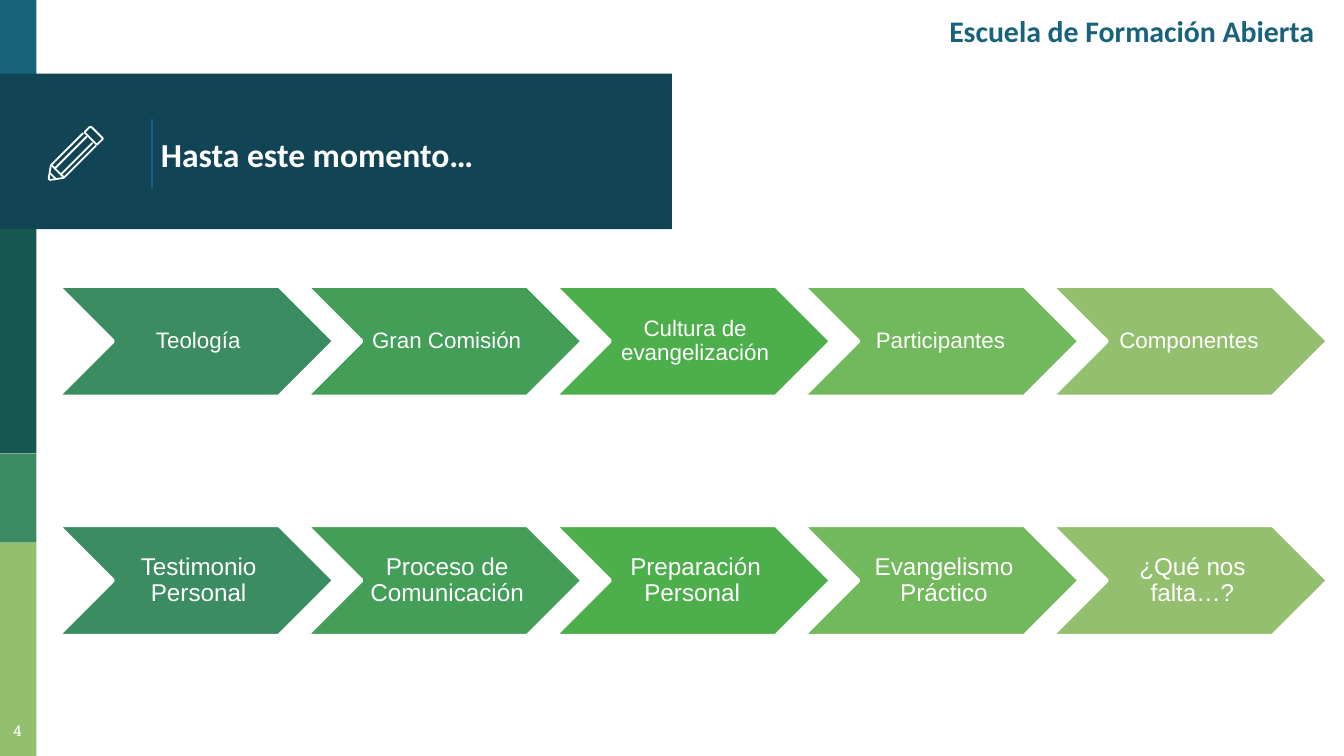
from lxml import etree
from pptx import Presentation
from pptx.dml.color import RGBColor
from pptx.enum.shapes import MSO_CONNECTOR, MSO_SHAPE
from pptx.enum.text import MSO_ANCHOR, MSO_AUTO_SIZE, PP_ALIGN
from pptx.oxml.ns import qn
from pptx.util import Pt

RECTANGLE, CHEVRON = MSO_SHAPE.RECTANGLE, MSO_SHAPE.CHEVRON
STRAIGHT = MSO_CONNECTOR.STRAIGHT
TOP, MIDDLE = MSO_ANCHOR.TOP, MSO_ANCHOR.MIDDLE
LEFT, CENTER, RIGHT = PP_ALIGN.LEFT, PP_ALIGN.CENTER, PP_ALIGN.RIGHT
NO_FIT = MSO_AUTO_SIZE.NONE

WHITE = RGBColor(0xFF, 0xFF, 0xFF)
BLUE = RGBColor(0x18, 0x63, 0x7B)
NAVY = RGBColor(0x11, 0x44, 0x54)
TEAL = RGBColor(0x16, 0x57, 0x51)
GREEN = RGBColor(0x3B, 0x8D, 0x61)
LIME = RGBColor(0x94, 0xBF, 0x6E)
STEP_COLORS = [GREEN, RGBColor(0x43, 0x9E, 0x58), RGBColor(0x4C, 0xAF, 0x4B),
               RGBColor(0x72, 0xB8, 0x5C), LIME]

# Coloured blocks: left, top, width, height, colour
BLOCKS = [
    (0, 0, 19.5, 42, BLUE),
    (0, 39.5, 360, 83.25, NAVY),
    (0, 122.75, 19.5, 120.25, TEAL),
    (0, 243, 19.5, 47.75, GREEN),
    (0, 290.75, 19.5, 114.25, LIME),
]

# Pencil strokes: points, closed or open
PENCIL = [
    ([(54.9, 73.9), (49.3, 68.3), (48.6, 67.9), (47.9, 68.2), (45.3, 70.9),
      (51.9, 77.5), (54.7, 74.9), (55.1, 74.4)], True),           # eraser
    ([(49.6, 76.5), (32.6, 93.5)], False),                       # lower ridge
    ([(44.6, 71.3), (27.5, 88.4), (27.2, 89), (26.1, 95.7), (26.4, 96.2),
      (27, 96.4), (33.7, 95.4), (34.4, 95.1), (51.5, 78)], False),  # body
    ([(29.5, 90.1), (46.6, 73)], False),                         # upper ridge
    ([(29.9, 95.9), (26.7, 92.7)], False),                       # lead
    ([(27.5, 88.4), (34.4, 95.2)], False),                       # cut edge
]

# Process rows: top, text size, left inset, steps
ROWS = [
    (153.2, 12, 3.8, ["Teología", "Gran Comisión", "Cultura de evangelización",
                      "Participantes ", "Componentes "]),
    (281.4, 13, 4.1, ["Testimonio Personal", "Proceso de Comunicación",
                      "Preparación Personal ", "Evangelismo Práctico",
                      "¿Qué nos falta…?"]),
]
ROW_LEFT, STEP_PITCH, STEP_WIDTH, STEP_HEIGHT = 31, 133.1, 148, 59.2


def add_block(page, kind, left, top, width, height, color, border=None):
    block = page.shapes.add_shape(kind, Pt(left), Pt(top), Pt(width), Pt(height))
    block.shadow.inherit = False
    block.fill.solid()
    block.fill.fore_color.rgb = color
    if border:
        block.line.color.rgb = border
        block.line.width = Pt(2)
    else:
        block.line.fill.background()


def write_text(box, text, size, font="Arial", color=WHITE, bold=False,
               align=CENTER, anchor=MIDDLE, insets=(7.2, 7.2, 7.2, 7.2),
               spacing=None):
    frame = box.text_frame
    frame.word_wrap = True
    frame.auto_size = NO_FIT
    frame.vertical_anchor = anchor
    (frame.margin_left, frame.margin_top,
     frame.margin_right, frame.margin_bottom) = map(Pt, insets)
    para = frame.paragraphs[0]
    para.alignment = align
    if spacing:
        para.line_spacing = spacing
    span = para.add_run()
    span.text = text
    span.font.name = font
    span.font.size = Pt(size)
    span.font.bold = bold
    span.font.color.rgb = color


def add_text(page, left, top, width, height, text, size, **style):
    box = page.shapes.add_textbox(Pt(left), Pt(top), Pt(width), Pt(height))
    write_text(box, text, size, **style)


def add_title(page, text):
    title = page.shapes.title
    title.left, title.top, title.width, title.height = map(
        Pt, (79, 42, 304, 80.6))
    write_text(title, text, 18, font="Calibri", bold=True, align=LEFT)


def add_divider(page, x, top, bottom):
    divider = page.shapes.add_connector(STRAIGHT, Pt(x), Pt(top), Pt(x), Pt(bottom))
    divider.line.color.rgb = BLUE
    divider.line.width = Pt(0.75)
    etree.SubElement(divider._element.spPr, qn("a:effectLst"))


def add_stroke(page, points, closed):
    corners = [(Pt(x), Pt(y)) for x, y in points]
    builder = page.shapes.build_freeform(*corners[0])
    builder.add_line_segments(corners[1:], close=closed)
    stroke = builder.convert_to_shape()
    stroke.shadow.inherit = False
    stroke.fill.background()
    stroke.line.color.rgb = WHITE
    stroke.line.width = Pt(0.96)


def add_process_row(page, top, size, inset, steps):
    for index, (step, color) in enumerate(zip(steps, STEP_COLORS)):
        left = ROW_LEFT + index * STEP_PITCH
        add_block(page, CHEVRON, left, top, STEP_WIDTH, STEP_HEIGHT, color, WHITE)
        add_text(page, left + STEP_HEIGHT / 2, top, STEP_WIDTH - STEP_HEIGHT,
                 STEP_HEIGHT, step, size, spacing=0.9,
                 insets=(inset, 1.4, 1.4, 1.4))


def main():
    deck = Presentation()
    deck.slide_width, deck.slide_height = Pt(720), Pt(405)
    page = deck.slides.add_slide(deck.slide_layouts[5])

    # Side band and title panel
    for left, top, width, height, color in BLOCKS:
        add_block(page, RECTANGLE, left, top, width, height, color)
    add_divider(page, 81.5, 64, 101)

    # Title, brought in front of its panel
    add_title(page, "Hasta este momento…")
    page.shapes._spTree.append(page.shapes.title._element)

    # Page number and header
    add_text(page, -4.3, 379.5, 27.5, 25.5, "4", 8, font="Roboto Slab", anchor=TOP)
    add_text(page, 445, 4.3, 266.4, 44, "Escuela de Formación Abierta", 16,
             font="Calibri", color=BLUE, bold=True, align=RIGHT, anchor=TOP,
             insets=(7.2, 2.7, 7.2, 7.2))

    # Pencil icon
    for points, closed in PENCIL:
        add_stroke(page, points, closed)

    # Process rows
    for row in ROWS:
        add_process_row(page, *row)

    deck.save("out.pptx")


if __name__ == "__main__":
    main()
